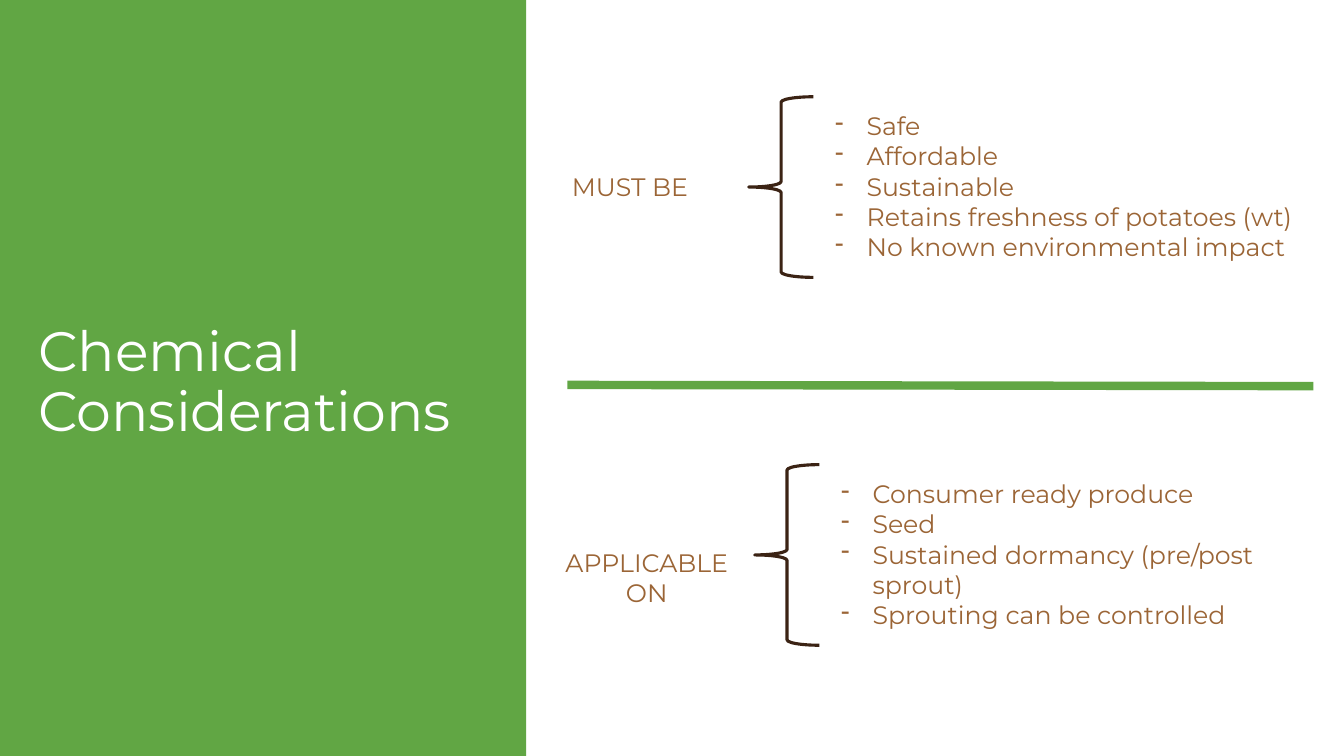
from lxml import etree
from pptx import Presentation
from pptx.dml.color import RGBColor
from pptx.enum import shapes, text
from pptx.oxml.ns import qn
from pptx.util import Cm, Pt

GREEN, BROWN, DARK, WHITE = "61A644", "9B6536", "3B2314", "FFFFFF"


def color(hex_string):
    return RGBColor.from_string(hex_string)


def set_font(paragraph, size, hex_string):
    paragraph.font.name = "Montserrat"
    paragraph.font.size = Pt(size)
    paragraph.font.color.rgb = color(hex_string)


def add_dash(paragraph):
    """Give the paragraph a hanging dash bullet."""
    properties = paragraph._p.get_or_add_pPr()
    properties.set("marL", str(Cm(0.79)))
    properties.set("indent", str(-Cm(0.79)))
    etree.SubElement(properties, qn("a:buChar"), char="-")


def add_lines(slide, box, lines, size=18, hex_string=BROWN, wrap=True,
              dashes=False, align=text.PP_ALIGN.LEFT):
    frame = slide.shapes.add_textbox(*map(Cm, box)).text_frame
    frame.word_wrap = wrap
    frame.text = "\n".join(lines)
    for paragraph in frame.paragraphs:
        if dashes:
            add_dash(paragraph)
        paragraph.alignment = align
        set_font(paragraph, size, hex_string)
    return frame


def title_panel(slide, left, top, width, height):
    panel = slide.shapes.add_shape(shapes.MSO_SHAPE.RECTANGLE,
                                   *map(Cm, (left, top, width, height)))
    panel.shadow.inherit = False
    panel.fill.solid()
    panel.fill.fore_color.rgb = color(GREEN)
    panel.line.fill.background()
    title = add_lines(slide, (left + 0.71, top + 8.28, 11.91, 2.79),
                      ["Chemical Considerations"], 39.6, WHITE)
    title.vertical_anchor = text.MSO_ANCHOR.MIDDLE
    title.paragraphs[0].line_spacing = 0.9


def divider(slide, left, top, right, bottom):
    rule = slide.shapes.add_connector(shapes.MSO_CONNECTOR.STRAIGHT,
                                      *map(Cm, (left, top, right, bottom)))
    rule.line.color.rgb = color(GREEN)
    rule.line.width = Pt(6)
    etree.SubElement(rule._element.spPr, qn("a:effectLst"))


def braced_list(slide, left, top, width, height, label_box, label, items):
    """Place a brace and its list in the box, with the label to its left."""
    brace = slide.shapes.add_shape(shapes.MSO_SHAPE.LEFT_BRACE,
                                   *map(Cm, (left, top, 1.63, height)))
    brace.shadow.inherit = False
    brace.fill.background()
    brace.line.color.rgb = color(DARK)
    brace.line.width = Pt(2.25)
    add_lines(slide, (left + 1.93, top + 0.22, width - 1.93, height - 0.44),
              items, dashes=True)
    dx, dy, label_width, label_height = label_box
    add_lines(slide, (left + dx, top + dy, label_width, label_height),
              label, wrap=False, align=text.PP_ALIGN.CENTER)


def main():
    deck = Presentation()
    deck.slide_width, deck.slide_height = Cm(33.87), Cm(19.05)
    slide = deck.slides.add_slide(deck.slide_layouts[6])
    title_panel(slide, 0, 0, 13.26, 19.05)
    divider(slide, 14.3, 9.7, 33.1, 9.73)
    braced_list(slide, 18.87, 2.44, 14.15, 4.55, (-4.72, 1.75, 3.45, 1.02),
                ["MUST BE"],
                ["Safe", "Affordable", "Sustainable",
                 "Retains freshness of potatoes (wt)",
                 "No known environmental impact"])
    braced_list(slide, 19.02, 11.71, 13.8, 4.55, (-5.08, 1.96, 4.72, 1.8),
                ["APPLICABLE", "ON"],
                ["Consumer ready produce", "Seed",
                 "Sustained dormancy (pre/post sprout)",
                 "Sprouting can be controlled"])
    deck.save("out.pptx")


if __name__ == "__main__":
    main()
